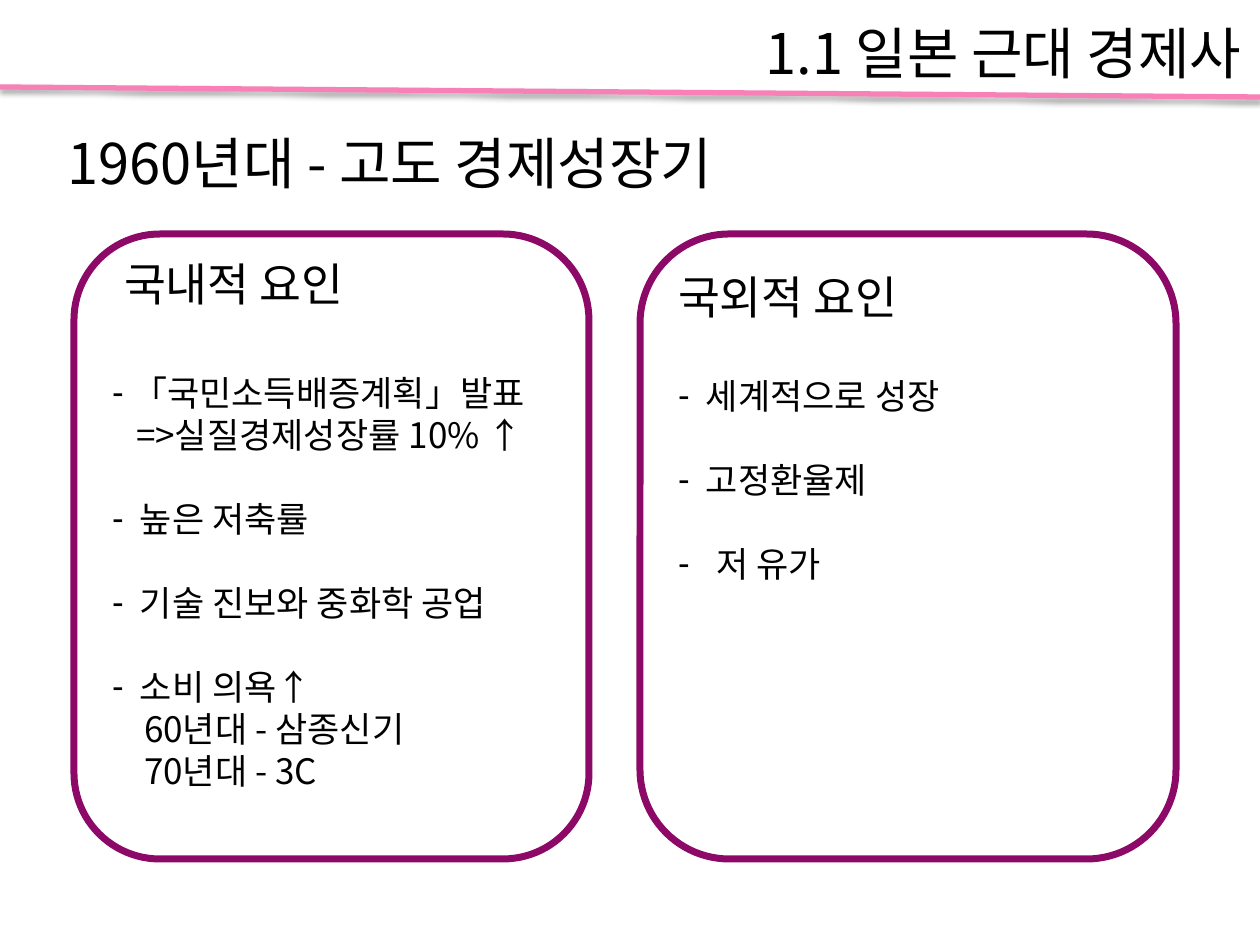
"""Build a slide on the causes of Japan's high growth era."""
from dataclasses import dataclass

import lxml.etree
import pptx
import pptx.dml.color
import pptx.enum.shapes
import pptx.enum.text
import pptx.oxml
import pptx.oxml.ns
import pptx.util

SCALE = 914400 / 126
FONT = "Noto Sans CJK KR"
HUES = {"text": "000000", "rule": "F781B6", "edge": "8D0967", "fill": "FFFFFF"}
SHADE = (
    f'<a:effectLst {pptx.oxml.ns.nsdecls("a")}>'
    '<a:outerShdw blurRad="39370" dist="22860" dir="5400000" rotWithShape="0">'
    '<a:srgbClr val="000000"><a:alpha val="35000"/></a:srgbClr>'
    '</a:outerShdw></a:effectLst>'
)


@dataclass
class Line:
    text: str
    dent: int = 28
    gap: int = 24
    dash: bool = True
    size: int = 20
    pitch: int = 24


@dataclass
class Panel:
    left: int
    width: int
    top: int
    lines: list[Line]


def head(text: str, dent: int = 0) -> Line:
    return Line(text, dent, 0, False, 26, 31)


def big(text: str) -> Line:
    return Line(text, 0, 0, False, 32, 42)


def sub(text: str, dent: int) -> Line:
    return Line(text, dent, 0, False)


PANELS = [
    Panel(640, 536, 269, [
        head("국외적 요인"),
        Line("세계적으로 성장", gap=29),
        Line("고정환율제"),
        Line("저 유가", 38),
    ]),
    Panel(74, 515, 256, [
        head("국내적 요인", 12),
        Line("「국민소득배증계획」발표", 20, 35),
        sub("=>실질경제성장률 10% ↑", 24),
        Line("높은 저축률"),
        Line("기술 진보와 중화학 공업"),
        Line("소비 의욕↑"),
        sub("60년대 - 삼종신기", 32),
        sub("70년대 - 3C", 32),
    ]),
]


def px(num: int) -> int:
    return round(num * SCALE)


def hue(name: str) -> pptx.dml.color.RGBColor:
    return pptx.dml.color.RGBColor.from_string(HUES[name])


def place(shape, left: int, top: int, width: int, height: int) -> None:
    shape.left, shape.top = px(left), px(top)
    shape.width, shape.height = px(width), px(height)


def write(shape, lines: list[Line], pad: tuple[int, int], align, wrap: bool = True) -> None:
    frame = shape.text_frame
    frame.word_wrap = wrap
    frame.auto_size = pptx.enum.text.MSO_AUTO_SIZE.NONE
    frame.vertical_anchor = pptx.enum.text.MSO_ANCHOR.TOP
    frame.margin_left = frame.margin_right = px(pad[0])
    frame.margin_top = frame.margin_bottom = px(pad[1])
    for num, line in enumerate(lines):
        para = frame.add_paragraph() if num else frame.paragraphs[0]
        para.alignment = align
        para.line_spacing = pptx.util.Pt(line.pitch)
        para.space_before = pptx.util.Pt(line.gap)
        para.space_after = pptx.util.Pt(0)
        props = para._p.get_or_add_pPr()
        props.set("marL", str(px(line.dent)))
        props.set("indent", str(-px(line.dent) if line.dash else 0))
        mark = lxml.etree.SubElement(
            props, pptx.oxml.ns.qn("a:buChar" if line.dash else "a:buNone"))
        if line.dash:
            mark.set("char", "-")
        run = para.add_run()
        run.text = line.text
        run.font.size = pptx.util.Pt(line.size)
        run.font.color.rgb = hue("text")
        run.font.name = FONT
        east = lxml.etree.SubElement(run.font._element, pptx.oxml.ns.qn("a:ea"))
        east.set("typeface", FONT)


def draw(slide, panel: Panel, body) -> None:
    card = slide.shapes.add_shape(
        pptx.enum.shapes.MSO_SHAPE.ROUNDED_RECTANGLE, 0, 0, 0, 0)
    place(card, panel.left, 234, panel.width, 625)
    card.shadow.inherit = False
    card.fill.solid()
    card.fill.fore_color.rgb = hue("fill")
    card.line.color.rgb = hue("edge")
    card.line.width = pptx.util.Pt(4)
    place(body, panel.left + 38, panel.top, panel.width - 60, 834 - panel.top)
    write(body, panel.lines, (0, 0), pptx.enum.text.PP_ALIGN.LEFT)
    card.element.addnext(body.element)


def rule(slide) -> None:
    line = slide.shapes.add_connector(
        pptx.enum.shapes.MSO_CONNECTOR.STRAIGHT, 0, px(87), px(1260), px(97))
    line.line.color.rgb = hue("rule")
    line.line.width = pptx.util.Pt(3)
    line.element.spPr.append(pptx.oxml.parse_xml(SHADE))


def main() -> None:
    deck = pptx.Presentation()
    deck.slide_width, deck.slide_height = px(1260), px(945)
    slide = deck.slides.add_slide(deck.slide_layouts[3])
    title, *bodies = slide.placeholders
    rule(slide)
    place(title, 669, 6, 586, 81)
    write(title, [big("1.1 일본 근대 경제사")], (13, 6),
          pptx.enum.text.PP_ALIGN.RIGHT)
    era = slide.shapes.add_textbox(px(54), px(116), px(722), px(81))
    write(era, [big("1960년대 - 고도 경제성장기")], (13, 6),
          pptx.enum.text.PP_ALIGN.LEFT, False)
    for panel, body in zip(PANELS, reversed(bodies)):
        draw(slide, panel, body)
    deck.save("out.pptx")


if __name__ == "__main__":
    main()
